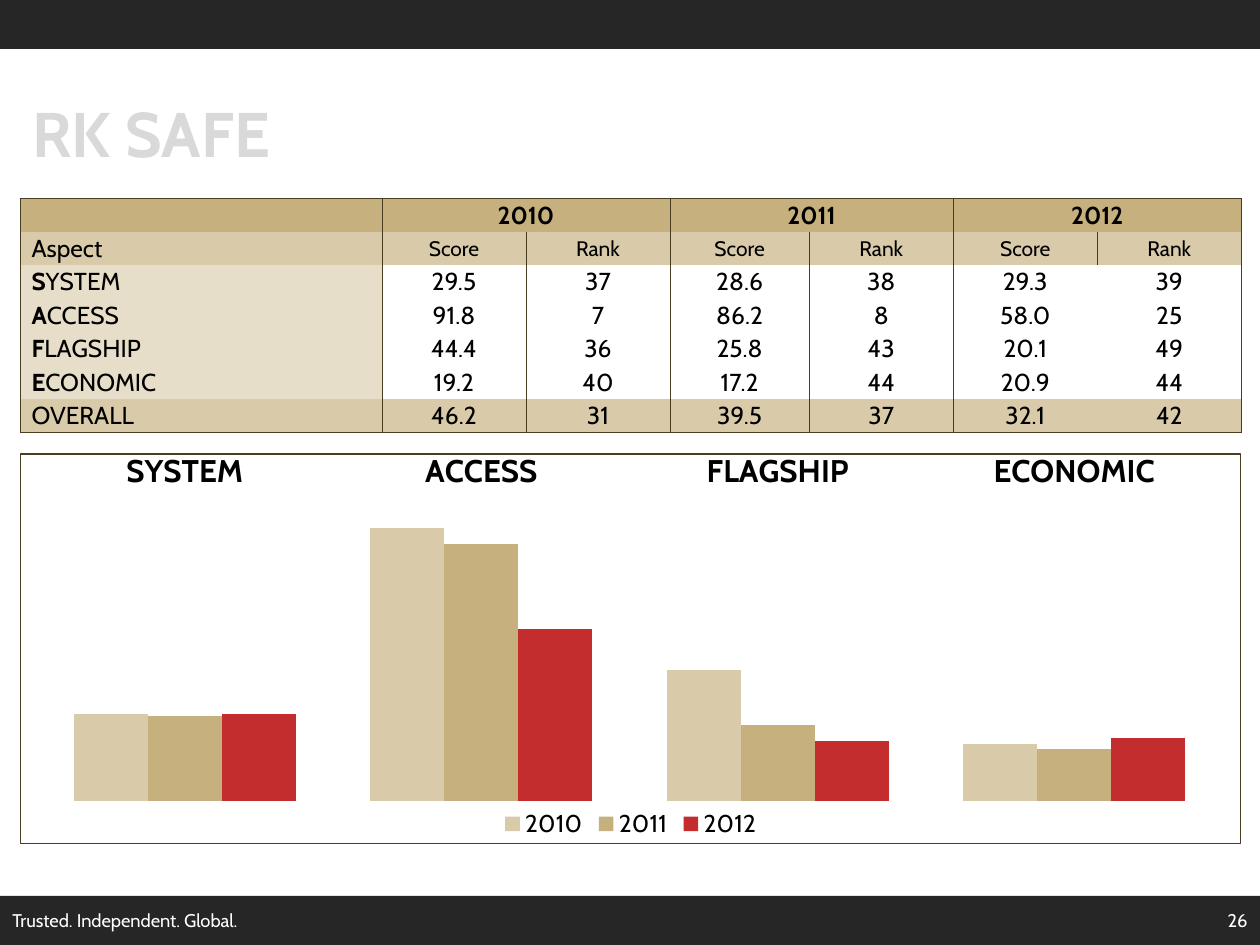
"""Build the SAFE ranking slide with its score table and column chart."""
from lxml import etree
from pptx import Presentation
from pptx.chart.data import CategoryChartData
from pptx.dml.color import RGBColor
from pptx.enum.chart import XL_CHART_TYPE, XL_LEGEND_POSITION, XL_TICK_LABEL_POSITION, XL_TICK_MARK
from pptx.enum.shapes import MSO_SHAPE
from pptx.enum.text import MSO_ANCHOR, PP_ALIGN
from pptx.oxml import parse_xml
from pptx.oxml.ns import nsdecls, qn
from pptx.util import Pt

COLUMN_CLUSTERED = XL_CHART_TYPE.COLUMN_CLUSTERED
LEGEND_BOTTOM = XL_LEGEND_POSITION.BOTTOM
LABELS_HIGH = XL_TICK_LABEL_POSITION.HIGH
TICK_NONE = XL_TICK_MARK.NONE
RECTANGLE = MSO_SHAPE.RECTANGLE
MIDDLE = MSO_ANCHOR.MIDDLE
LEFT, CENTER, RIGHT = PP_ALIGN.LEFT, PP_ALIGN.CENTER, PP_ALIGN.RIGHT

BLACK = RGBColor(0x00, 0x00, 0x00)
WHITE = RGBColor(0xFF, 0xFF, 0xFF)
CHARCOAL = RGBColor(0x26, 0x26, 0x26)
TITLE_GREY = RGBColor(0xD9, 0xD9, 0xD9)
GOLD = RGBColor(0xC6, 0xB0, 0x7D)
SAND = RGBColor(0xD9, 0xCB, 0xAA)
CREAM = RGBColor(0xE7, 0xDE, 0xC9)
BORDER_BROWN = RGBColor(0x49, 0x3E, 0x21)
RED = RGBColor(0xC3, 0x2D, 0x2E)

FONT = "Cabin"
NO_STYLE = "{2D5ABB26-0587-4C30-8999-92F81FD0307C}"
MARGIN, CONTENT_WIDTH = 11.5, 697.9
BAR_HEIGHT = 28
FOOTER_TOP = 540 - BAR_HEIGHT


def format_run(run, size, color, bold=False):
    run.font.name = FONT
    run.font.size = Pt(size)
    run.font.bold = bold
    run.font.color.rgb = color


def add_label(text, left, top, width, height, size, color, alignment=LEFT, bold=False):
    text_box = slide.shapes.add_textbox(Pt(left), Pt(top), Pt(width), Pt(height))
    text_frame = text_box.text_frame
    text_frame.word_wrap = True
    text_frame.vertical_anchor = MIDDLE
    text_frame.text = text
    paragraph = text_frame.paragraphs[0]
    paragraph.alignment = alignment
    format_run(paragraph.runs[0], size, color, bold)


presentation = Presentation()
presentation.slide_width = Pt(720)
presentation.slide_height = Pt(540)
slide = presentation.slides.add_slide(presentation.slide_layouts[6])

for bar_top in (FOOTER_TOP, 0):
    bar = slide.shapes.add_shape(RECTANGLE, 0, Pt(bar_top), Pt(720), Pt(BAR_HEIGHT))
    bar.shadow.inherit = False
    bar.fill.solid()
    bar.fill.fore_color.rgb = CHARCOAL
    bar.line.fill.background()

chart_data = CategoryChartData(number_format="0")
chart_data.categories = ["SYSTEM", "ACCESS", "FLAGSHIP", "ECONOMIC"]
yearly_values = {
    "2010": ((32, 100, 48, 21), SAND),
    "2011": ((31, 94, 28, 19), GOLD),
    "2012": ((32, 63, 22, 23), RED),
}
for year, (values, color) in yearly_values.items():
    chart_data.add_series(year, values)
chart = slide.shapes.add_chart(
    COLUMN_CLUSTERED, Pt(MARGIN), Pt(258.7), Pt(CONTENT_WIDTH), Pt(223.9), chart_data
).chart
chart.has_title = False
chart.font.name = FONT
chart.font.size = Pt(14)
chart.font.color.rgb = BLACK
chart.has_legend = True
chart.legend.position = LEGEND_BOTTOM
chart.legend.include_in_layout = False

category_axis = chart.category_axis
category_axis.tick_label_position = LABELS_HIGH
category_axis.major_tick_mark = TICK_NONE
category_axis.format.line.fill.background()
label_font = category_axis.tick_labels.font
label_font.name = FONT
label_font.size = Pt(18)
label_font.bold = True
label_font.color.rgb = BLACK

value_axis = chart.value_axis
value_axis.visible = False
value_axis.has_major_gridlines = False
value_axis.minimum_scale = 0
value_axis.maximum_scale = 109

plot = chart.plots[0]
plot.gap_width = 100
plot.overlap = 0
plot.vary_by_categories = False
for series in plot.series:
    series.format.fill.solid()
    series.format.fill.fore_color.rgb = yearly_values[series.name][1]

plot_area = chart._chartSpace.chart.plotArea
for old_layout in plot_area.findall(qn("c:layout")):
    plot_area.remove(old_layout)
plot_area.insert(0, parse_xml(
    f'<c:layout {nsdecls("c")}><c:manualLayout><c:layoutTarget val="inner"/>'
    '<c:xMode val="edge"/><c:yMode val="edge"/><c:x val="0.013"/><c:y val="0.126"/>'
    '<c:w val="0.972"/><c:h val="0.765"/></c:manualLayout></c:layout>'
))
chart._chartSpace.chart.addnext(parse_xml(
    f'<c:spPr {nsdecls("c", "a")}><a:solidFill><a:srgbClr val="{WHITE}"/></a:solidFill>'
    f'<a:ln w="{Pt(0.75)}"><a:solidFill><a:srgbClr val="{BORDER_BROWN}"/></a:solidFill></a:ln></c:spPr>'
))

add_label("RK SAFE", MARGIN, 39.6, CONTENT_WIDTH, 72, 36, TITLE_GREY, bold=True)

table_rows = [
    ["", "", "2010", "", "2011", "", "2012", ""],
    ["Aspect", ""] + ["Score", "Rank"] * 3,
    ["SYSTEM", "", "29.5", "37", "28.6", "38", "29.3", "39"],
    ["ACCESS", "", "91.8", "7", "86.2", "8", "58.0", "25"],
    ["FLAGSHIP", "", "44.4", "36", "25.8", "43", "20.1", "49"],
    ["ECONOMIC", "", "19.2", "40", "17.2", "44", "20.9", "44"],
    ["OVERALL", "", "46.2", "31", "39.5", "37", "32.1", "42"],
]
column_widths = [103.4, 103.4, 82.3, 82.3, 79.6, 82.3, 82.3, 82.3]
row_height = 19.13
last_row = len(table_rows) - 1
table = slide.shapes.add_table(
    len(table_rows), len(column_widths), Pt(MARGIN), Pt(113.4),
    Pt(CONTENT_WIDTH), Pt(row_height * len(table_rows))
).table
table._tbl.tblPr.find(qn("a:tableStyleId")).text = NO_STYLE
for column, width in zip(table.columns, column_widths):
    column.width = Pt(width)
for row in table.rows:
    row.height = Pt(row_height)
for column_index in (2, 4, 6):
    table.cell(0, column_index).merge(table.cell(0, column_index + 1))
for row_index in range(2, len(table_rows)):
    table.cell(row_index, 0).merge(table.cell(row_index, 1))

for row_index, row_texts in enumerate(table_rows):
    for column_index, text in enumerate(row_texts):
        cell = table.cell(row_index, column_index)
        is_aspect = column_index < 2
        cell.margin_left = Pt(6.5 if is_aspect else 0)
        cell.margin_right = cell.margin_top = cell.margin_bottom = 0
        cell.vertical_anchor = MIDDLE

        edges = {
            "L": column_index % 2 == 0,
            "R": column_index % 2 == 1 or cell.is_merge_origin,
            "T": row_index == 0,
            "B": row_index == last_row,
        }
        properties = cell._tc.get_or_add_tcPr()
        for side in [side for side, shown in edges.items() if shown]:
            edge = etree.SubElement(properties, qn(f"a:ln{side}"), w=str(Pt(0.5)))
            edge_fill = etree.SubElement(edge, qn("a:solidFill"))
            etree.SubElement(edge_fill, qn("a:srgbClr"), val=str(BORDER_BROWN))

        cell.fill.solid()
        if row_index == 0:
            cell.fill.fore_color.rgb = GOLD
        elif row_index in (1, last_row):
            cell.fill.fore_color.rgb = SAND
        else:
            cell.fill.fore_color.rgb = CREAM if is_aspect else WHITE

        paragraph = cell.text_frame.paragraphs[0]
        paragraph.alignment = LEFT if is_aspect else CENTER
        if not text:
            paragraph._p.get_or_add_endParaRPr().set("sz", "1400")
            continue
        has_initial = column_index == 0 and 1 < row_index < last_row
        size = 12 if row_index == 1 and not is_aspect else 14
        parts = [text[0], text[1:]] if has_initial else [text]
        for part_index, part in enumerate(parts):
            run = paragraph.add_run()
            run.text = part
            format_run(run, size, BLACK, row_index == 0 or (has_initial and part_index == 0))

add_label("Trusted. Independent. Global.", 0, FOOTER_TOP, 551.5, BAR_HEIGHT, 10.5, WHITE)
add_label("26", 552, FOOTER_TOP, 168, BAR_HEIGHT, 10.5, WHITE, RIGHT)

presentation.save("out.pptx")
